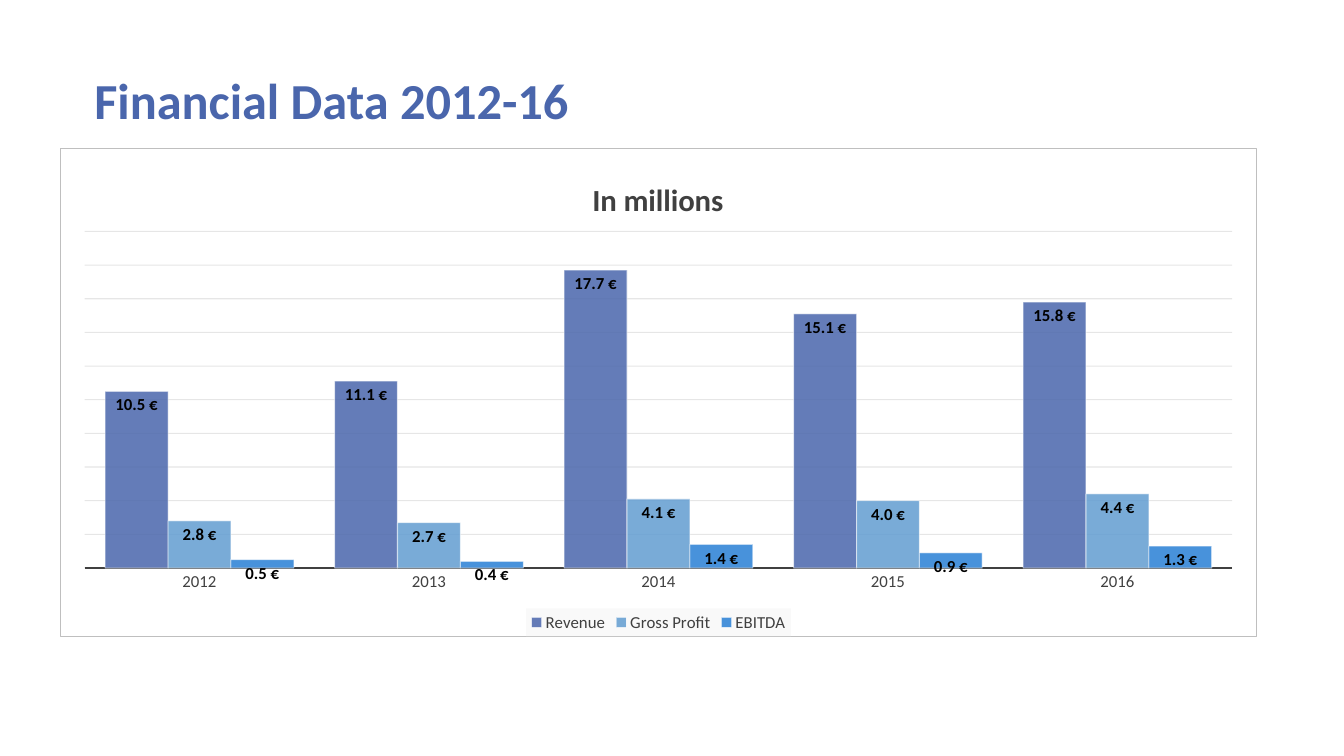
import dataclasses

import lxml.etree
import pptx
import pptx.chart.data
import pptx.dml.color
import pptx.enum.chart
import pptx.enum.text
import pptx.oxml
import pptx.oxml.ns
import pptx.util

Cm = pptx.util.Cm
Pt = pptx.util.Pt
RGB = pptx.dml.color.RGBColor.from_string
qn = pptx.oxml.ns.qn


@dataclasses.dataclass
class Theme:
    face: str = "Calibri"
    heading: str = "4A66AC"
    series: tuple = ("4A66AC", "629DD1", "297FD5")
    white: str = "FFFFFF"
    label: str = "000000"
    text: str = "404040"
    grid: str = "0D0D0D"
    border: str = "BFBFBF"
    legend: str = "F2F2F2"
    heading_size: int = 36
    chart_title_size: int = 22
    chart_size: int = 12


class Deck:
    def __init__(self, prs, theme):
        self.theme = theme
        self.slide = prs.slides.add_slide(prs.slide_layouts[6])

    def font(self, font, size, color, bold=False):
        font.name = self.theme.face
        font.size = Pt(size)
        font.bold = bold
        font.color.rgb = RGB(color)

    def paint(self, fill=None, line=None):
        def solid(color, alpha):
            return (f'<a:solidFill><a:srgbClr val="{color}">'
                    f'<a:alpha val="{alpha * 1000}"/></a:srgbClr></a:solidFill>')

        body = solid(*fill) if fill else ""
        edge = f'<a:ln w="{Pt(0.75)}">{solid(*line)}</a:ln>' if line else "<a:ln><a:noFill/></a:ln>"
        return pptx.oxml.parse_xml(
            f'<c:spPr {pptx.oxml.ns.nsdecls("c", "a")}>{body}{edge}</c:spPr>')

    def place(self, parent, inner=False, **box):
        for old in parent.findall(qn("c:layout")):
            parent.remove(old)
        layout = lxml.etree.Element(qn("c:layout"))
        manual = lxml.etree.SubElement(layout, qn("c:manualLayout"))
        settings = {"layoutTarget": "inner"} if inner else {}
        settings.update(xMode="edge", yMode="edge", **box)
        for name, value in settings.items():
            lxml.etree.SubElement(manual, qn(f"c:{name}")).set("val", str(value))
        tx = parent.find(qn("c:tx"))
        if tx is None:
            parent.insert(0, layout)
        else:
            tx.addnext(layout)

    def heading(self, text, left, top, width, height):
        sp = self.slide.shapes.add_textbox(left, top, width, height)
        tf = sp.text_frame
        tf.word_wrap = True
        tf.vertical_anchor = pptx.enum.text.MSO_ANCHOR.BOTTOM
        tf.text = text
        p = tf.paragraphs[0]
        p.line_spacing = 0.8
        self.font(p.runs[0].font, self.theme.heading_size, self.theme.heading, True)

    def column_chart(self, title, categories, values, number_format, left, top, width, height):
        t = self.theme
        data = pptx.chart.data.CategoryChartData(number_format=number_format)
        data.categories = categories
        for name, points in values.items():
            data.add_series(name, points)
        chart = self.slide.shapes.add_chart(
            pptx.enum.chart.XL_CHART_TYPE.COLUMN_CLUSTERED,
            left, top, width, height, data).chart
        self.font(chart.font, t.chart_size, t.text)
        space = chart._chartSpace
        space.find(qn("c:chart")).addnext(self.paint((t.white, 100), (t.border, 100)))

        chart.has_title = True
        tf = chart.chart_title.text_frame
        tf.text = title
        self.font(tf.paragraphs[0].runs[0].font, t.chart_title_size, t.text, True)
        chart.chart_title.include_in_layout = False
        self.place(space.chart.find(qn("c:title")), x=0.44, y=0.05)
        self.place(space.chart.plotArea, True, x=0.02, y=0.17, w=0.96, h=0.69)

        plot = chart.plots[0]
        plot.gap_width = 65
        plot.overlap = 0
        plot.vary_by_categories = False
        for s, color in zip(plot.series, t.series):
            s._element.find(qn("c:tx")).addnext(self.paint((color, 85), (t.white, 50)))
            labels = s.data_labels
            labels.show_value = True
            labels.number_format = number_format
            labels.number_format_is_linked = False
            labels.position = pptx.enum.chart.XL_LABEL_POSITION.INSIDE_END
            self.font(labels.font, t.chart_size, t.label, True)

        axis = chart.category_axis
        axis.major_tick_mark = pptx.enum.chart.XL_TICK_MARK.NONE
        axis.format.line.color.rgb = RGB(t.text)
        axis.format.line.width = Pt(1.5)
        self.font(axis.tick_labels.font, t.chart_size, t.text)

        axis = chart.value_axis
        axis.visible = False
        axis.minimum_scale, axis.maximum_scale, axis.major_unit = 0, 20, 2
        axis.has_major_gridlines = True
        space.chart.plotArea.find(".//" + qn("c:majorGridlines")).append(
            self.paint(line=(t.grid, 10)))

        chart.has_legend = True
        legend = chart.legend
        legend.position = pptx.enum.chart.XL_LEGEND_POSITION.BOTTOM
        legend.include_in_layout = False
        self.font(legend.font, t.chart_size, t.text)
        legend._element.find(qn("c:overlay")).addnext(self.paint((t.legend, 39)))


def main():
    prs = pptx.Presentation()
    prs.slide_width, prs.slide_height = Cm(33.87), Cm(19.05)
    deck = Deck(prs, Theme())
    deck.heading("Financial Data 2012-16", Cm(2.13), Cm(1.73), Cm(24.33), Cm(1.65))
    deck.column_chart(
        "In millions",
        ["2012", "2013", "2014", "2015", "2016"],
        {
            "Revenue": (10.5, 11.1, 17.7, 15.1, 15.8),
            "Gross Profit": (2.8, 2.7, 4.1, 4.0, 4.4),
            "EBITDA": (0.5, 0.4, 1.4, 0.9, 1.3),
        },
        '#,##0.0\\ "€"',
        Cm(1.52), Cm(3.73), Cm(30.15), Cm(12.32))
    prs.save("out.pptx")


if __name__ == "__main__":
    main()
